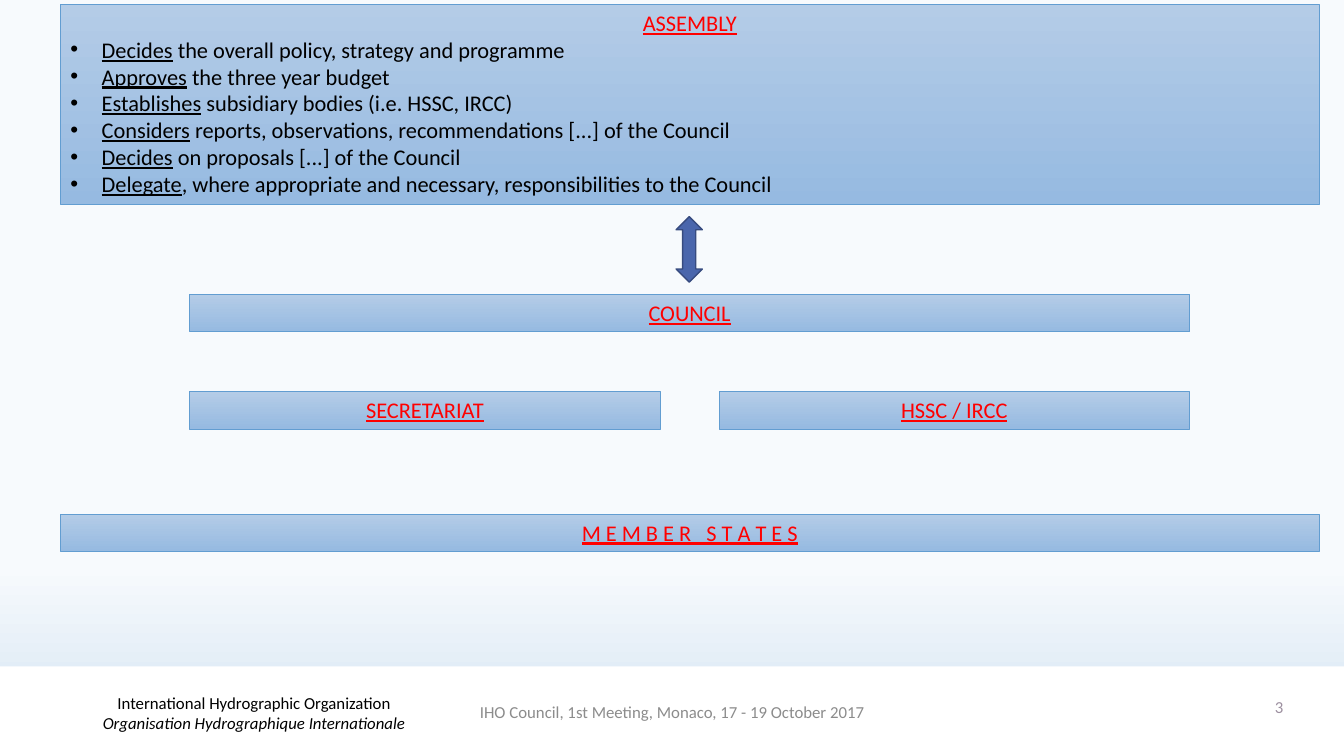
from dataclasses import dataclass

from lxml.etree import SubElement
from pptx import Presentation
from pptx.dml.color import RGBColor
from pptx.enum.dml import MSO_LINE
from pptx.enum.shapes import MSO_SHAPE as Preset
from pptx.enum.text import MSO_ANCHOR as Anchor, MSO_AUTO_SIZE as AutoSize, PP_ALIGN as Align
from pptx.oxml.ns import qn
from pptx.util import Cm, Pt

FONT = "Calibri"
BLACK = RGBColor(0x00, 0x00, 0x00)
WHITE = RGBColor(0xFF, 0xFF, 0xFF)
RED = RGBColor(0xFF, 0x00, 0x00)
FOOTER_GREY = RGBColor(0x8C, 0x8C, 0x8C)
NUMBER_GREY = RGBColor(0x9D, 0x90, 0xA0)
PANEL_TOP = RGBColor(0xB4, 0xCC, 0xE7)
PANEL_BOTTOM = RGBColor(0x96, 0xBA, 0xE1)
PANEL_EDGE = RGBColor(0x62, 0x9D, 0xD1)
ARROW_FILL = RGBColor(0x4A, 0x66, 0xAC)
ARROW_EDGE = RGBColor(0x37, 0x4B, 0x7F)
SKY_TOP = RGBColor(0xF7, 0xFA, 0xFD)
SKY_BOTTOM = RGBColor(0xD0, 0xE2, 0xF1)

PAGE_WIDTH, PAGE_HEIGHT = 33.87, 19.05
WIDE_LEFT, WIDE_WIDTH = 1.52, 31.73
COUNCIL_LEFT, COUNCIL_WIDTH = 4.78, 25.2
HALF_WIDTH = 11.86
HALF_LEFT = COUNCIL_LEFT + COUNCIL_WIDTH - HALF_WIDTH
BAR_HEIGHT = 0.94
BODY_TOP = 9.87
FOOTER_TOP = 16.79


@dataclass
class Frame:
    left: float
    top: float
    width: float
    height: float

    def lengths(self) -> tuple:
        return Cm(self.left), Cm(self.top), Cm(self.width), Cm(self.height)


@dataclass
class Bar:
    label: str
    frame: Frame


@dataclass
class FooterText:
    text: str
    frame: Frame
    align: Align
    anchor: Anchor
    color: RGBColor


@dataclass
class Duty:
    verb: str
    rest: str


BARS = [
    Bar("M E M B E R   S T A T E S", Frame(WIDE_LEFT, 12.95, WIDE_WIDTH, BAR_HEIGHT)),
    Bar("COUNCIL", Frame(COUNCIL_LEFT, 7.42, COUNCIL_WIDTH, BAR_HEIGHT)),
    Bar("HSSC / IRCC", Frame(HALF_LEFT, BODY_TOP, HALF_WIDTH, BAR_HEIGHT)),
    Bar("SECRETARIAT", Frame(COUNCIL_LEFT, BODY_TOP, HALF_WIDTH, BAR_HEIGHT)),
]
DUTIES = [
    Duty("Decides", " the overall policy, strategy and programme"),
    Duty("Approves", " the three year budget"),
    Duty("Establishes", " subsidiary bodies (i.e. HSSC, IRCC)"),
    Duty("Considers", " reports, observations, recommendations [...] of the Council"),
    Duty("Decides", " on proposals [...] of the Council"),
    Duty("Delegate", ", where appropriate and necessary, responsibilities to the Council"),
]
FOOTERS = [
    FooterText("International Hydrographic Organization\vOrganisation Hydrographique Internationale",
               Frame(0.69, 17.45, 11.43, 1.02), Align.CENTER, Anchor.MIDDLE, BLACK),
    FooterText("IHO Council, 1st Meeting, Monaco, 17 - 19 October 2017",
               Frame(11.23, 17.42, 11.43, 1.02), Align.CENTER, Anchor.MIDDLE, FOOTER_GREY),
    FooterText("3", Frame(24.97, 17.42, 7.62, 1.02), Align.RIGHT, Anchor.TOP, NUMBER_GREY),
]


def style_span(span, size: float, color: RGBColor, underline: bool = False) -> None:
    span.font.name = FONT
    span.font.size = Pt(size)
    span.font.color.rgb = color
    span.font.underline = underline


def fill_gradient(fill, start: RGBColor, end: RGBColor, first_stop: float = 0) -> None:
    fill.gradient()
    fill.gradient_angle = 270
    for stop, color, position in zip(fill.gradient_stops, (start, end), (first_stop, 1)):
        stop.color.rgb = color
        stop.position = position


def style_panel(panel) -> None:
    fill_gradient(panel.fill, PANEL_TOP, PANEL_BOTTOM)
    panel.line.color.rgb = PANEL_EDGE
    panel.line.width = Pt(0.5)
    panel.line.dash_style = MSO_LINE.SOLID
    frame = panel.text_frame
    frame.word_wrap = True
    frame.auto_size = AutoSize.NONE
    frame.vertical_anchor = Anchor.TOP


def write_heading(para, label: str) -> None:
    para.text = label
    para.alignment = Align.CENTER
    style_span(para.runs[0], 16, RED, True)


def draw_shape(page, preset: Preset, frame: Frame):
    shape = page.shapes.add_shape(preset, *frame.lengths())
    shape.shadow.inherit = False
    return shape


def draw_bar(page, bar: Bar) -> None:
    box = draw_shape(page, Preset.RECTANGLE, bar.frame)
    style_panel(box)
    write_heading(box.text_frame.paragraphs[0], bar.label)


def draw_arrow(page, frame: Frame) -> None:
    arrow = draw_shape(page, Preset.UP_DOWN_ARROW, frame)
    arrow.fill.solid()
    arrow.fill.fore_color.rgb = ARROW_FILL
    arrow.line.color.rgb = ARROW_EDGE
    arrow.line.width = Pt(1)


def set_bullet(para, indent: float, symbol: str = "") -> None:
    para.space_before = Pt(0)
    para.line_spacing = 1.0
    properties = para._p.get_or_add_pPr()
    properties.set("marL", str(Cm(indent)))
    properties.set("indent", str(-Cm(indent)))
    if symbol:
        SubElement(properties, qn("a:buChar"), char=symbol)
    else:
        SubElement(properties, qn("a:buNone"))


def fill_assembly(box, frame: Frame) -> None:
    box.left, box.top, box.width, box.height = frame.lengths()
    style_panel(box)
    heading = box.text_frame.paragraphs[0]
    write_heading(heading, "ASSEMBLY")
    set_bullet(heading, 0)
    for duty in DUTIES:
        para = box.text_frame.add_paragraph()
        set_bullet(para, 0.79, "•")
        for text, underline in ((duty.verb, True), (duty.rest, False)):
            span = para.add_run()
            span.text = text
            style_span(span, 16, BLACK, underline)


def draw_footer(page, footer: FooterText) -> None:
    box = page.shapes.add_textbox(*footer.frame.lengths())
    box.text_frame.word_wrap = True
    box.text_frame.vertical_anchor = footer.anchor
    para = box.text_frame.paragraphs[0]
    para.text = footer.text
    para.alignment = footer.align
    for index, span in enumerate(para.runs):
        style_span(span, 12, footer.color)
        span.font.italic = index > 0


def main() -> None:
    deck = Presentation()
    deck.slide_width, deck.slide_height = Cm(PAGE_WIDTH), Cm(PAGE_HEIGHT)
    page = deck.slides.add_slide(deck.slide_layouts[1])
    fill_gradient(page.background.fill, SKY_TOP, SKY_BOTTOM, 0.75)
    title = page.shapes.title
    title.element.getparent().remove(title.element)

    band = draw_shape(page, Preset.RECTANGLE,
                      Frame(0, FOOTER_TOP, PAGE_WIDTH, PAGE_HEIGHT - FOOTER_TOP))
    band.fill.solid()
    band.fill.fore_color.rgb = WHITE
    band.line.fill.background()
    for bar in BARS:
        draw_bar(page, bar)
    draw_arrow(page, Frame(17.04, 5.46, 0.66, 1.65))
    fill_assembly(page.placeholders[1], Frame(WIDE_LEFT, 0.1, WIDE_WIDTH, 5.05))
    for footer in FOOTERS:
        draw_footer(page, footer)
    deck.save("out.pptx")


if __name__ == "__main__":
    main()
